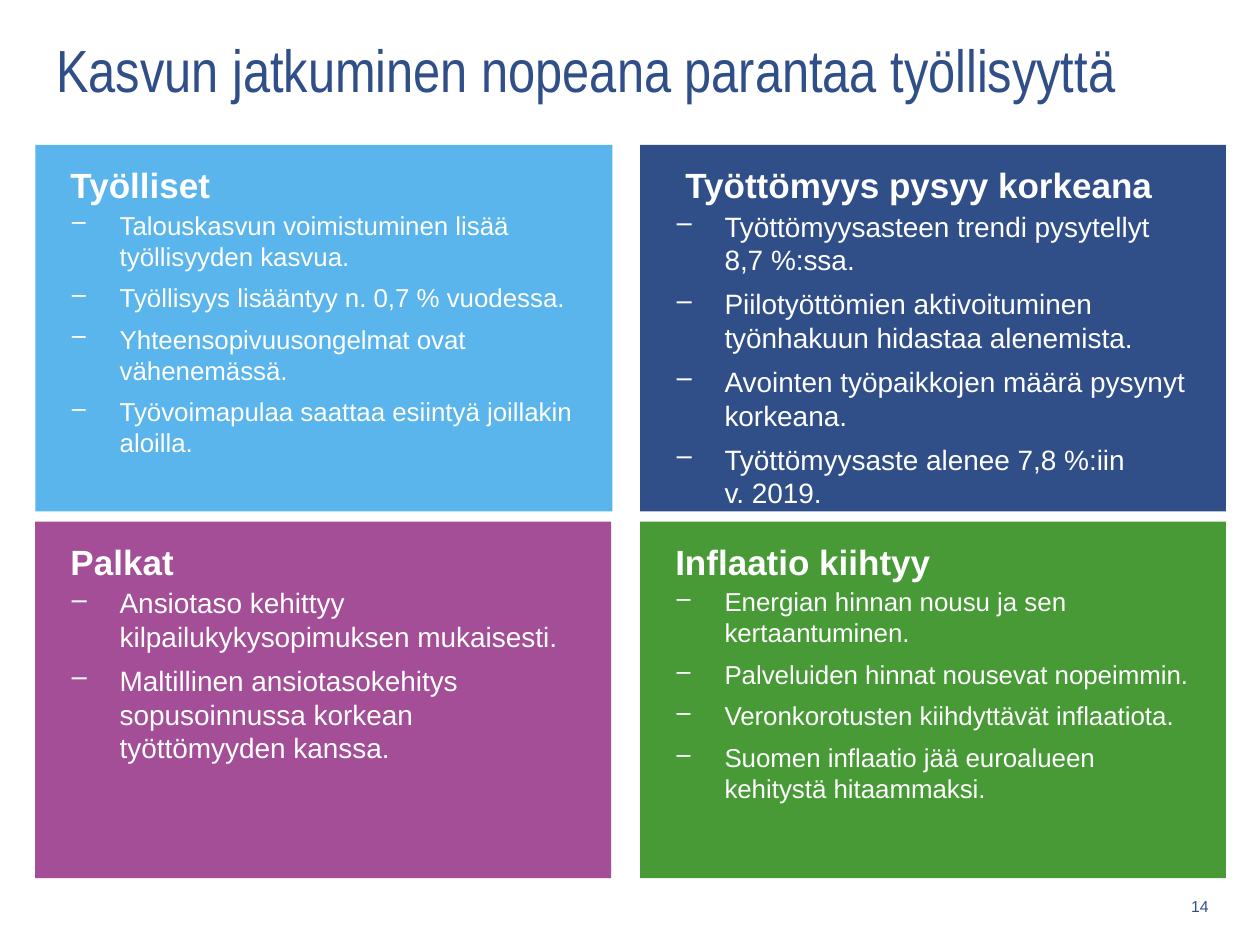
import pptx
import pptx.dml.color
import pptx.enum.shapes
import pptx.enum.text
import pptx.oxml.ns
import pptx.util
from lxml import etree

Inches = pptx.util.Inches
Pt = pptx.util.Pt
qn = pptx.oxml.ns.qn
ALIGN = pptx.enum.text.PP_ALIGN
ANCHOR = pptx.enum.text.MSO_ANCHOR
COLORS = {"sky": "5AB5EC", "navy": "304E88", "plum": "A34E96",
          "green": "479A36", "white": "FFFFFF"}


def rgb(name):
    return pptx.dml.color.RGBColor.from_string(COLORS[name])


def write(tf, lines, size, color="white", font="Arial", bold=False, align=ALIGN.LEFT,
          anchor=ANCHOR.TOP, insets=(0.1, 0.05, 0.1, 0.05), after=0,
          bullet=None, indent=0.39):
    tf.word_wrap = True
    tf.vertical_anchor = anchor
    tf.margin_left, tf.margin_top, tf.margin_right, tf.margin_bottom = map(Inches, insets)
    for i, line in enumerate(lines):
        p = tf.paragraphs[0] if i == 0 else tf.add_paragraph()
        p.alignment, p.space_after = align, Pt(after)
        if bullet:
            pPr = p._p.get_or_add_pPr()
            pPr.set("marL", str(Inches(indent)))
            pPr.set("indent", str(-Inches(indent)))
            etree.SubElement(pPr, qn("a:buChar")).set("char", bullet)
        for j, part in enumerate(line.split("|")):
            if j:
                p.add_line_break()
                br = p._p.findall(qn("a:br"))[-1]
                etree.SubElement(br, qn("a:rPr")).set("sz", str(round(size * 100)))
            r = p.add_run()
            r.text = part
            r.font.name, r.font.size, r.font.bold = font, Pt(size), bold
            r.font.color.rgb = rgb(color)


class Deck:
    """Holds the style and the current slide."""
    body = dict(insets=(0.28, 0.51, 0.2, 0.2), after=6, bullet="‒")
    heading = dict(insets=(0.28, 0.16, 0.2, 0.2), after=8, size=20, bold=True)

    def __init__(self):
        self.prs = pptx.Presentation()
        self.prs.slide_width, self.prs.slide_height = Inches(10), Inches(7.5)
        self.s = self.prs.slides.add_slide(self.prs.slide_layouts[6])

    def text(self, box, line, **fmt):
        sp = self.s.shapes.add_textbox(*map(Inches, box))
        write(sp.text_frame, [line], **fmt)

    def panel(self, box, fill, lines, size):
        sp = self.s.shapes.add_shape(pptx.enum.shapes.MSO_SHAPE.RECTANGLE, *map(Inches, box))
        sp.shadow.inherit = False
        sp.fill.solid()
        sp.fill.fore_color.rgb = rgb(fill)
        sp.line.fill.background()
        write(sp.text_frame, lines, size, **self.body)


PANELS = [
    ((0.28, 1.15, 4.58, 2.91), "sky", 14.8, "Työlliset", (0.28, 0.47), [
        "Talouskasvun voimistuminen lisää työllisyyden kasvua.",
        "Työllisyys lisääntyy n. 0,7 % vuodessa.",
        "Yhteensopivuusongelmat ovat vähenemässä.",
        "Työvoimapulaa saattaa esiintyä joillakin aloilla."]),
    ((5.08, 1.15, 4.65, 2.91), "navy", 16, "Työttömyys pysyy korkeana", (5.16, 0.47), [
        "Työttömyysasteen trendi pysytellyt|8,7 %:ssa.",
        "Piilotyöttömien aktivoituminen työnhakuun hidastaa alenemista.",
        "Avointen työpaikkojen määrä pysynyt korkeana.",
        "Työttömyysaste alenee 7,8 %:iin|v. 2019."]),
    ((0.28, 4.14, 4.57, 2.83), "plum", 16, "Palkat", (0.28, 0.55), [
        "Ansiotaso kehittyy kilpailukykysopimuksen mukaisesti.",
        "Maltillinen ansiotasokehitys sopusoinnussa korkean työttömyyden kanssa."]),
    ((5.08, 4.14, 4.65, 2.83), "green", 14.8, "Inflaatio kiihtyy", (5.08, 0.55), [
        "Energian hinnan nousu ja sen kertaantuminen.",
        "Palveluiden hinnat nousevat nopeimmin.",
        "Veronkorotusten kiihdyttävät inflaatiota.",
        "Suomen inflaatio jää euroalueen kehitystä hitaammaksi."]),
]


def main():
    deck = Deck()
    deck.text((9.17, 7.03, 0.52, 0.32), "14", size=9, color="navy",
              align=ALIGN.RIGHT, anchor=ANCHOR.MIDDLE)
    for box, fill, size, _, _, lines in PANELS:
        deck.panel(box, fill, lines, size)
    for box, _, _, title, (left, height), _ in PANELS:
        deck.text((left, box[1], 4.57, height), title, **deck.heading)
    deck.text((0.35, 0.21, 9.37, 0.67), "Kasvun jatkuminen nopeana parantaa työllisyyttä",
              size=34, color="navy", font="Arial Narrow")
    deck.prs.save("out.pptx")


if __name__ == "__main__":
    main()
